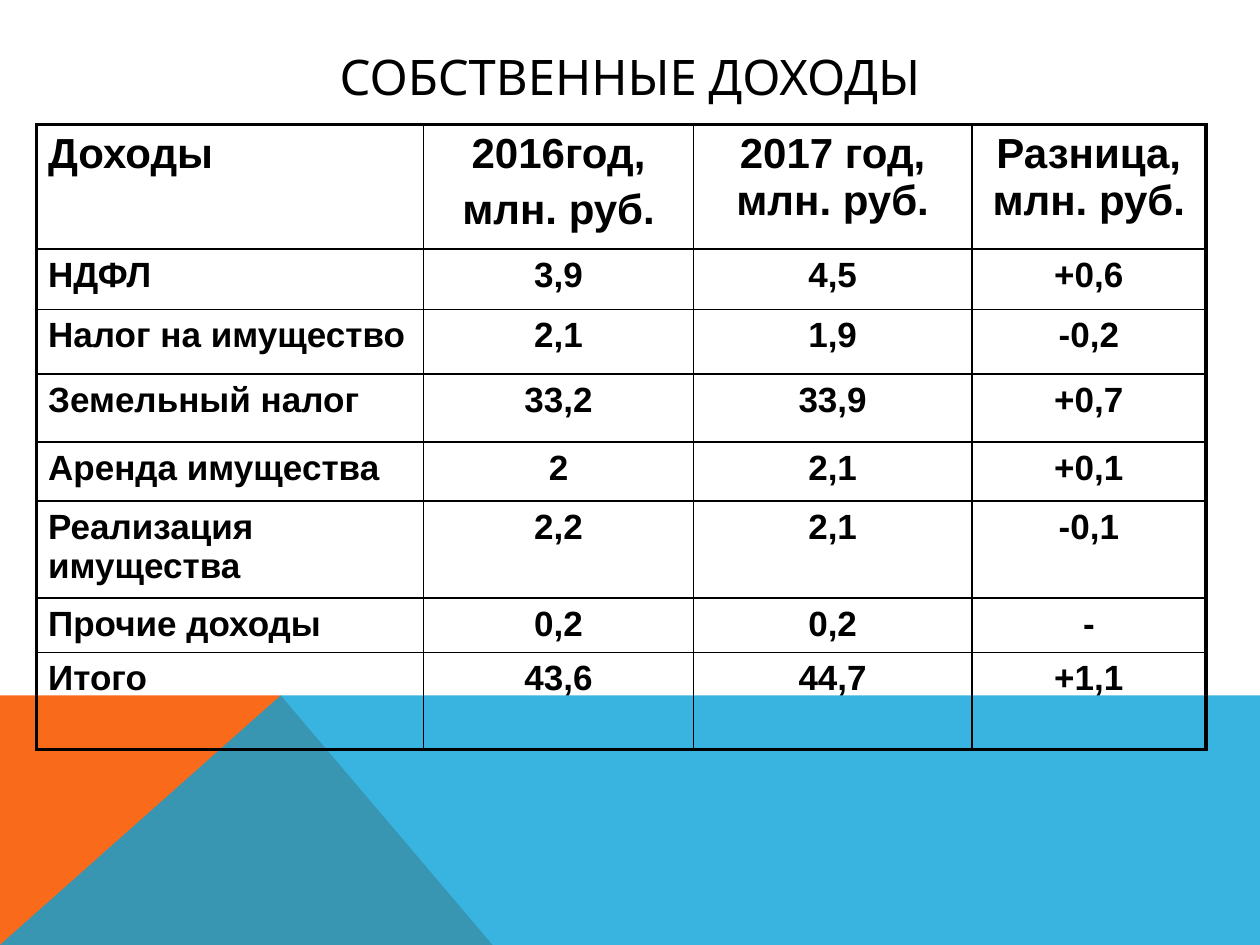
from pptx import Presentation, util as u
from pptx.dml.color import RGBColor
from pptx.enum import text
from pptx.oxml import parse_xml
from pptx.oxml.ns import nsdecls, qn
from lxml import etree

THEME = {
    "ink": "000000", "warm": "F96A1B", "cool": "08A1D9",
    "head": "Karla", "body": "Arial",
    "title": 28, "top": 24, "cell": 20,
    "thin": 1, "thick": 2.25, "alpha": 80,
}
TITLE = "СОБСТВЕННЫЕ ДОХОДЫ"
ROWS = [
    ("Доходы", "2016год,\nмлн. руб.", "2017 год, млн. руб.", "Разница, млн. руб."),
    ("НДФЛ", "3,9", "4,5", "+0,6"),
    ("Налог на имущество", "2,1", "1,9", "-0,2"),
    ("Земельный налог", "33,2", "33,9", "+0,7"),
    ("Аренда имущества", "2", "2,1", "+0,1"),
    ("Реализация имущества", "2,2", "2,1", "-0,1"),
    ("Прочие доходы", "0,2", "0,2", "-"),
    ("Итого", "43,6", "44,7", "+1,1"),
]
WIDTHS = [7.8, 5.44, 5.61, 4.72]
HEIGHTS = [2.51, 1.22, 1.3, 1.37, 1.19, 1.96, 1.09, 1.96]
WIDE, HIGH = 25.4, 19.05
BAND, PEAK = 14.02, 5.66
SHAPES = [
    ("warm", None, [(0, HIGH), (0, BAND), (PEAK, BAND), (9.93, HIGH)]),
    ("cool", THEME["alpha"], [(0, HIGH), (PEAK, BAND), (WIDE, BAND), (WIDE, HIGH)]),
]


def style(par, face, size, bold, align):
    par.alignment = align
    for run in par.runs:
        font = run.font
        font.name, font.size, font.bold = face, u.Pt(size), bold
        font.color.rgb = RGBColor.from_string(THEME["ink"])


def draw(slide, color, alpha, points):
    spots = [(u.Cm(x), u.Cm(y)) for x, y in points]
    pen = slide.shapes.build_freeform(*spots[0])
    pen.add_line_segments(spots[1:], close=True)
    shape = pen.convert_to_shape()
    shape.shadow.inherit = False
    shape.line.fill.background()
    shape.fill.solid()
    shape.fill.fore_color.rgb = RGBColor.from_string(THEME[color])
    if alpha:
        tint = shape.fill._xPr.find(".//" + qn("a:srgbClr"))
        etree.SubElement(tint, qn("a:alpha")).set("val", str(alpha * 1000))


def border(cell, thick):
    props = cell._tc.get_or_add_tcPr()
    for spot, side in enumerate("LRTB"):
        size = u.Pt(THEME["thick" if side in thick else "thin"])
        props.insert(spot, parse_xml(
            f'<a:ln{side} {nsdecls("a")} w="{size}"><a:solidFill>'
            f'<a:srgbClr val="{THEME["ink"]}"/></a:solidFill></a:ln{side}>'))


def fill_cell(cell, words, row, col):
    cell.fill.background()
    cell.margin_left = cell.margin_right = u.Cm(0.23)
    cell.margin_top = cell.margin_bottom = u.Cm(0.13)
    cell.text_frame.text = words
    size = THEME["cell" if row else "top"]
    align = text.PP_ALIGN.CENTER if col else text.PP_ALIGN.LEFT
    for par in cell.text_frame.paragraphs:
        style(par, THEME["body"], size, True, align)
        par.space_before = u.Pt(size * 0.2)
    edges = {"L": col == 0, "R": col == len(WIDTHS) - 1,
             "T": row == 0, "B": row == len(ROWS) - 1}
    border(cell, [side for side, outer in edges.items() if outer])


def add_grid(slide):
    frame = slide.shapes.add_table(
        len(ROWS), len(WIDTHS), u.Cm(0.74), u.Cm(2.51),
        u.Cm(sum(WIDTHS)), u.Cm(sum(HEIGHTS)))
    grid = frame.table
    grid.first_row = grid.horz_banding = False
    for col, width in zip(grid.columns, WIDTHS):
        col.width = u.Cm(width)
    for row, height in zip(grid.rows, HEIGHTS):
        row.height = u.Cm(height)
    for r, row in enumerate(ROWS):
        for c, words in enumerate(row):
            fill_cell(grid.cell(r, c), words, r, c)


def add_title(slide):
    title = slide.shapes.title
    title.left, title.top = u.Cm(1.27), u.Cm(0.76)
    title.width, title.height = u.Cm(22.86), u.Cm(1.55)
    frame = title.text_frame
    frame.text = TITLE
    frame.vertical_anchor = text.MSO_ANCHOR.MIDDLE
    style(frame.paragraphs[0], THEME["head"], THEME["title"], False, text.PP_ALIGN.CENTER)


def main():
    deck = Presentation()
    deck.slide_width, deck.slide_height = u.Cm(WIDE), u.Cm(HIGH)
    slide = deck.slides.add_slide(deck.slide_layouts[5])
    for item in SHAPES:
        draw(slide, *item)
    add_title(slide)
    add_grid(slide)
    deck.save("out.pptx")


if __name__ == "__main__":
    main()
